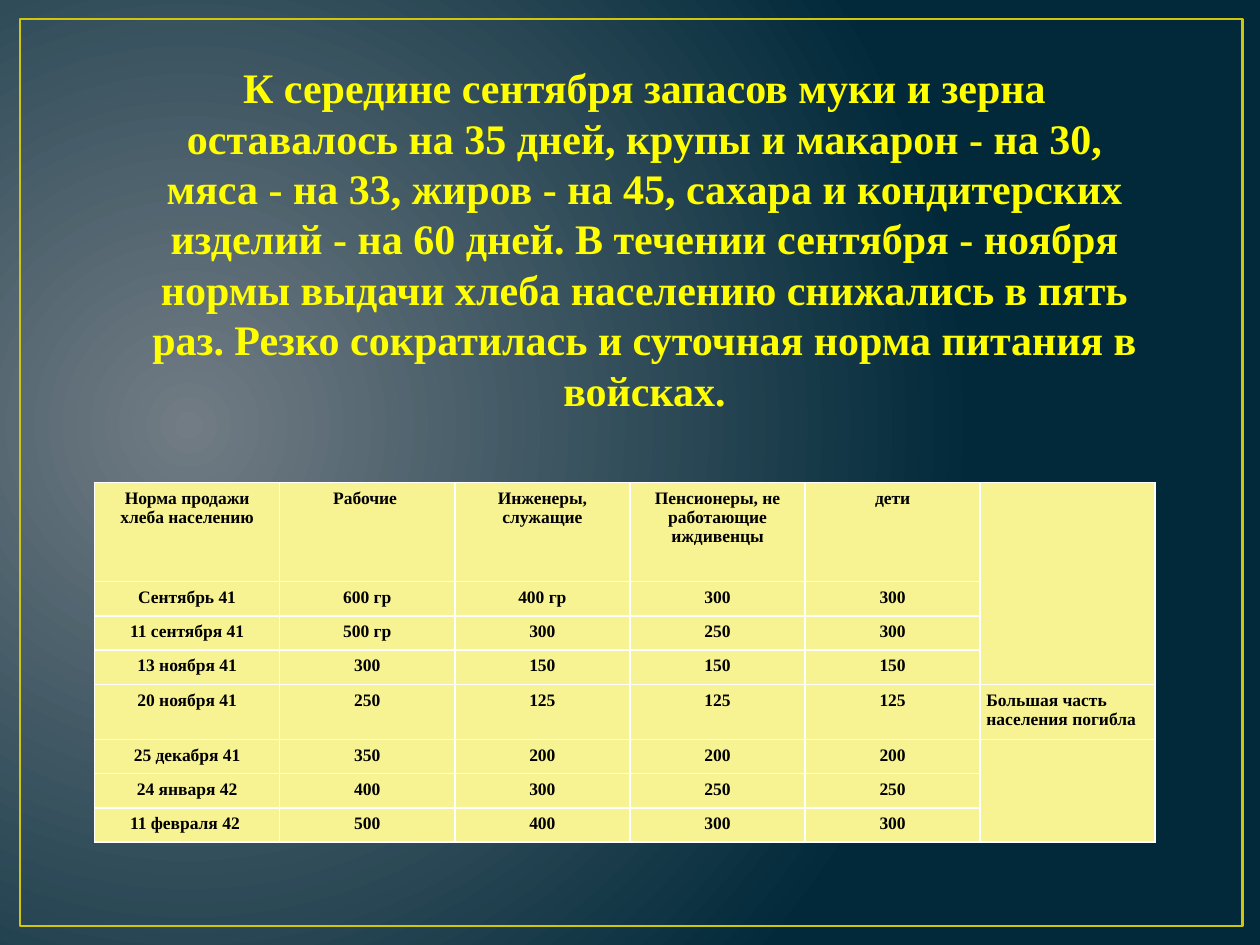
from typing import NamedTuple

from pptx import Presentation
from pptx.dml.color import RGBColor
from pptx.enum.shapes import MSO_SHAPE
from pptx.enum.text import MSO_AUTO_SIZE, PP_ALIGN
from pptx.oxml import parse_xml
from pptx.oxml.ns import nsdecls, qn
from pptx.util import Pt

RECTANGLE = MSO_SHAPE.RECTANGLE
CENTER, LEFT = PP_ALIGN.CENTER, PP_ALIGN.LEFT
GROW = MSO_AUTO_SIZE.SHAPE_TO_FIT_TEXT

FONT = "Times New Roman"
GLOW = RGBColor(0x71, 0x7C, 0x84)
NIGHT = RGBColor(0x01, 0x29, 0x3A)
GOLD = RGBColor(0xCF, 0xC6, 0x0D)
YELLOW = RGBColor(0xFF, 0xFF, 0x00)
CREAM = RGBColor(0xF8, 0xF3, 0x92)
BLACK = RGBColor(0x00, 0x00, 0x00)
WHITE = RGBColor(0xFF, 0xFF, 0xFF)

STORY = (
    "К середине сентября запасов муки и зерна оставалось на 35 дней, "
    "крупы и макарон - на 30, мяса - на 33, жиров - на 45, сахара и "
    "кондитерских изделий - на 60 дней. В течении сентября - ноября нормы "
    "выдачи хлеба населению снижались в пять раз. Резко сократилась и "
    "суточная норма питания в войсках."
)


class Ration(NamedTuple):
    date: str
    workers: str
    engineers: str
    dependants: str
    children: str
    note: str = ""
    height: float = 19.6


RATIONS = [
    Ration("Норма продажи хлеба населению", "Рабочие ", "Инженеры, служащие",
           "Пенсионеры, не работающие иждивенцы", "дети", height=56.6),
    Ration("Сентябрь 41", "600 гр", "400 гр", "300", "300"),
    Ration("11 сентября 41", "500 гр", "300", "250", "300"),
    Ration("13 ноября 41", "300", "150", "150", "150"),
    Ration("20 ноября 41", "250", "125", "125", "125",
           "Большая часть населения погибла", 31.4),
    Ration("25 декабря 41", "350", "200", "200", "200"),
    Ration("24 января 42", "400", "300", "250", "250"),
    Ration("11 февраля 42 ", "500", "400", "300", "300"),
]
COLUMN_WIDTHS = [105.84] + [100.08] * 5
NOTE_COLUMN = 5
NOTE_SPANS = [(0, 3), (5, 7)]


def paint_background(slide) -> None:
    """Radial glow left of the centre, fading to dark blue."""
    slide.background.fill.gradient()
    linear = next(slide.element.iter(qn("a:gradFill")))
    radial = parse_xml(
        f'<a:gradFill {nsdecls("a")} rotWithShape="1"><a:gsLst>'
        f'<a:gs pos="0"><a:srgbClr val="{GLOW}"/></a:gs>'
        f'<a:gs pos="100000"><a:srgbClr val="{NIGHT}"/></a:gs></a:gsLst>'
        '<a:path path="circle">'
        '<a:fillToRect l="15000" t="50000" r="85000" b="60000"/>'
        '</a:path></a:gradFill>')
    linear.getparent().replace(linear, radial)


def write(paragraph, text: str, size: float, color: RGBColor,
          align: PP_ALIGN) -> None:
    paragraph.alignment = align
    run = paragraph.add_run()
    run.text = text
    run.font.name = FONT
    run.font.size = Pt(size)
    run.font.bold = True
    run.font.color.rgb = color


def add_border(cell) -> None:
    properties = cell._tc.get_or_add_tcPr()
    for position, side in enumerate(("lnL", "lnR", "lnT", "lnB")):
        properties.insert(position, parse_xml(
            f'<a:{side} {nsdecls("a")} w="{Pt(1)}"><a:solidFill>'
            f'<a:srgbClr val="{WHITE}"/></a:solidFill></a:{side}>'))


def fill_cell(cell, text: str, align: PP_ALIGN) -> None:
    cell.margin_left = cell.margin_right = Pt(3.6)
    cell.margin_top = cell.margin_bottom = Pt(3.6)
    cell.fill.solid()
    cell.fill.fore_color.rgb = CREAM
    add_border(cell)
    paragraph = cell.text_frame.paragraphs[0]
    if text:
        write(paragraph, text, 10, BLACK, align)
    else:
        # Keeps an empty cell from stretching its row
        paragraph._p.get_or_add_endParaRPr().set("sz", "1000")


def add_rations(slide, left: float, top: float) -> None:
    table = slide.shapes.add_table(
        len(RATIONS), len(COLUMN_WIDTHS), Pt(left), Pt(top),
        Pt(sum(COLUMN_WIDTHS)), Pt(sum(r.height for r in RATIONS))).table
    for column, width in zip(table.columns, COLUMN_WIDTHS):
        column.width = Pt(width)
    for row, ration in enumerate(RATIONS):
        table.rows[row].height = Pt(ration.height)
        for column, text in enumerate(ration[:NOTE_COLUMN + 1]):
            align = LEFT if column == NOTE_COLUMN else CENTER
            fill_cell(table.cell(row, column), text, align)
    for first, last in NOTE_SPANS:
        table.cell(first, NOTE_COLUMN).merge(table.cell(last, NOTE_COLUMN))


def main() -> None:
    deck = Presentation()
    deck.slide_width, deck.slide_height = Pt(720), Pt(540)
    slide = deck.slides.add_slide(deck.slide_layouts[6])
    paint_background(slide)

    # Gold frame around the slide
    frame = slide.shapes.add_shape(
        RECTANGLE, Pt(11.52), Pt(10.8), Pt(698.4), Pt(518.4))
    frame.shadow.inherit = False
    frame.fill.background()
    frame.line.color.rgb = GOLD
    frame.line.width = Pt(1.5)

    # Account of the food stocks
    story = slide.shapes.add_textbox(
        Pt(76.32), Pt(31.68), Pt(583.92), Pt(210.96)).text_frame
    story.word_wrap = True
    story.auto_size = GROW
    write(story.paragraphs[0], STORY, 24, YELLOW, CENTER)

    # Bread rations by date and group
    add_rations(slide, 54, 275.76)

    deck.save("out.pptx")


if __name__ == "__main__":
    main()
